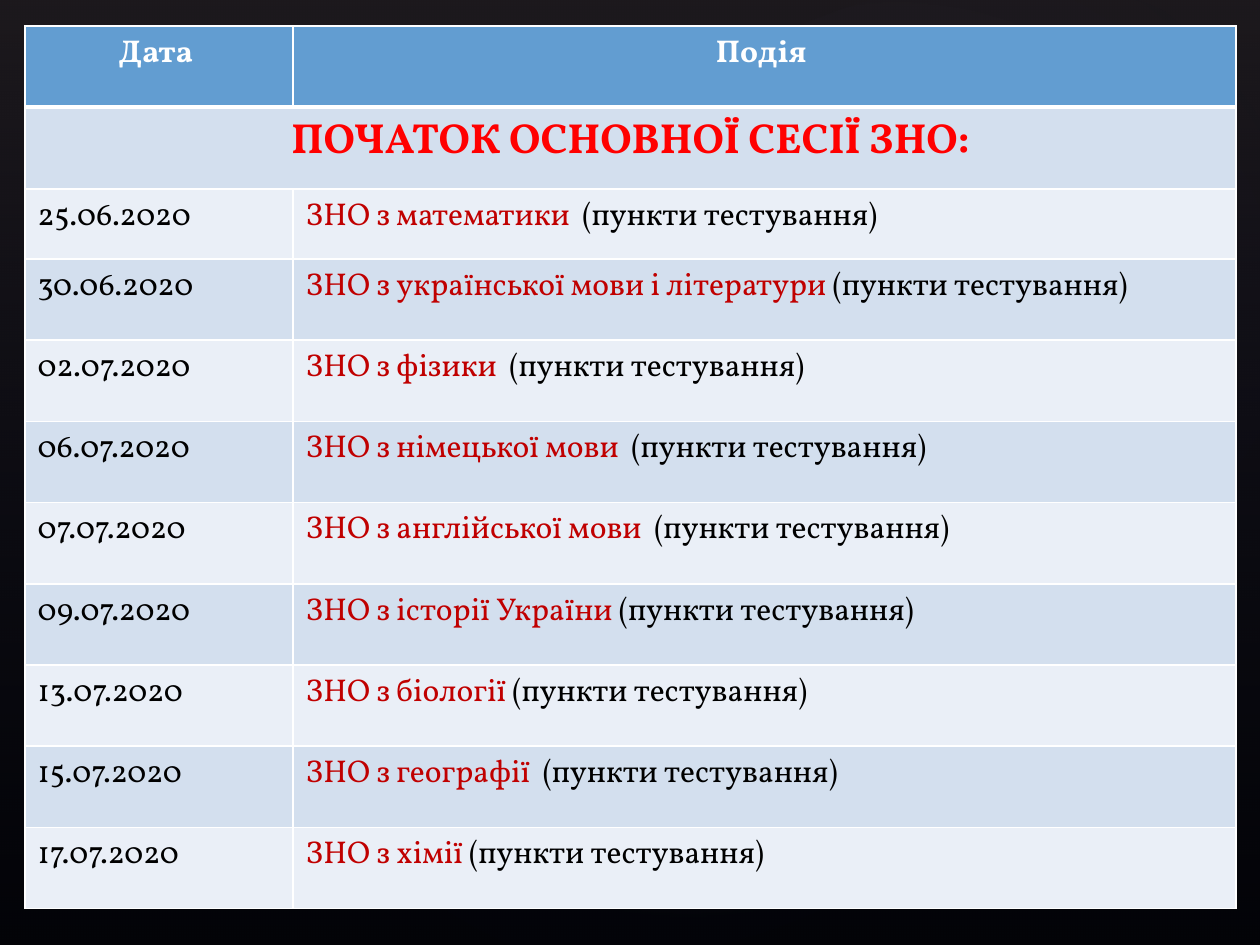
from lxml.etree import SubElement
from pptx import Presentation
from pptx.dml.color import RGBColor
from pptx.enum.shapes import MSO_SHAPE
from pptx.enum.text import PP_ALIGN
from pptx.oxml.ns import qn
from pptx.util import Pt

PX = 914400 / 126
THEME = {
    "font": "Vollkorn",
    "body_size": 18,
    "session_size": 24,
    "veil": "504652",
    "glow": "C4BCC6",
    "navy": "242852",
    "header": "629DD1",
    "band_dark": "D3DFEE",
    "band_light": "EAEFF7",
    "white": "FFFFFF",
    "black": "000000",
    "session": "FF0000",
    "exam": "C00000",
}
VEIL_STOPS = [(0, "veil", 36), (1, "navy", 10)]
BACKDROP = [
    (MSO_SHAPE.RECTANGLE, (0, 0, 1260, 945), 0, VEIL_STOPS),
    (MSO_SHAPE.OVAL, (189, 144, 998, 786), 328.7, [(0, "glow", 7), (0.58, "navy", 0)]),
    (MSO_SHAPE.OVAL, (-38, 161, 764, 617), 294.3, [(0, "glow", 8), (0.58, "navy", 0)]),
    (MSO_SHAPE.OVAL, (451, 16, 893, 655), 328.7, [(0, "glow", 8), (0.58, "navy", 0)]),
]
EXAMS = [
    ("25.06.2020", "ЗНО з математики  "),
    ("30.06.2020", "ЗНО з української мови і літератури "),
    ("02.07.2020", "ЗНО з фізики  "),
    ("06.07.2020", "ЗНО з німецької мови  "),
    ("07.07.2020", "ЗНО з англійської мови  "),
    ("09.07.2020", "ЗНО з історії України "),
    ("13.07.2020", "ЗНО з біології "),
    ("15.07.2020", "ЗНО з географії  "),
    ("17.07.2020", "ЗНО з хімії "),
]
PLACE = "(пункти тестування)"


def color(name):
    return RGBColor.from_string(THEME[name])


def write_cell(cell, fill, runs, size="body_size", bold=False, alignment=PP_ALIGN.LEFT, top=1, bottom=1):
    cell.fill.solid()
    cell.fill.fore_color.rgb = color(fill)
    properties = cell._tc.get_or_add_tcPr()
    for position, (side, width) in enumerate({"L": 1, "R": 1, "T": top, "B": bottom}.items()):
        line = SubElement(properties, qn(f"a:ln{side}"), w=str(Pt(width)))
        solid = SubElement(line, qn("a:solidFill"))
        SubElement(solid, qn("a:srgbClr"), val=THEME["white"])
        properties.insert(position, line)
    paragraph = cell.text_frame.paragraphs[0]
    paragraph.alignment = alignment
    for text, ink in runs:
        run = paragraph.add_run()
        run.text = text
        run.font.color.rgb = color(ink)
        font_format = {"name": THEME["font"], "size": Pt(THEME[size]), "bold": bold}
        for attribute, value in font_format.items():
            setattr(run.font, attribute, value)


presentation = Presentation()
presentation.slide_width = round(1260 * PX)
presentation.slide_height = round(945 * PX)
slide = presentation.slides.add_slide(presentation.slide_layouts[6])
slide.background.fill.solid()
slide.background.fill.fore_color.rgb = color("black")

for kind, bounds, rotation, stops in BACKDROP:
    shape = slide.shapes.add_shape(kind, *[round(value * PX) for value in bounds])
    shape.rotation = rotation
    shape.shadow.inherit = False
    shape.line.fill.background()
    shape.fill.gradient()
    shape.fill.gradient_angle = 270
    gradient = shape._element.spPr.find(qn("a:gradFill"))
    for stop, (position, name, opacity) in zip(shape.fill.gradient_stops, stops):
        stop.position = position
        stop.color.rgb = color(name)
    for element, (position, name, opacity) in zip(gradient.iter(qn("a:srgbClr")), stops):
        SubElement(element, qn("a:alpha"), val=str(opacity * 1000))
    if kind == MSO_SHAPE.OVAL:
        gradient.remove(gradient.find(qn("a:lin")))
        radial = SubElement(gradient, qn("a:path"), path="circle")
        SubElement(radial, qn("a:fillToRect"), dict.fromkeys("ltrb", "50000"))

column_widths = [268, 943]
row_heights = [81, 82, 70] + [650 / 8] * 8
bounds = [round(value * PX) for value in (25, 26, sum(column_widths), sum(row_heights))]
table = slide.shapes.add_table(len(row_heights), len(column_widths), *bounds).table
table.horz_banding = False
for column, width in zip(table.columns, column_widths):
    column.width = round(width * PX)
for row, height in zip(table.rows, row_heights):
    row.height = round(height * PX)

heading = {"bold": True, "alignment": PP_ALIGN.CENTER}
for column, title in enumerate(("Дата ", "Подія ")):
    write_cell(table.cell(0, column), "header", [(title, "white")], bottom=3, **heading)

table.cell(1, 0).merge(table.cell(1, 1))
session_runs = [("ПОЧАТОК ОСНОВНОЇ СЕСІЇ ЗНО:", "session")]
for column, runs in enumerate((session_runs, [])):
    write_cell(table.cell(1, column), "band_dark", runs, size="session_size", top=3, **heading)

for row, (date, exam) in enumerate(EXAMS, start=2):
    band = "band_dark" if row % 2 else "band_light"
    write_cell(table.cell(row, 0), band, [(date, "black")])
    write_cell(table.cell(row, 1), band, [(exam, "exam"), (PLACE, "black")])

presentation.save("out.pptx")
